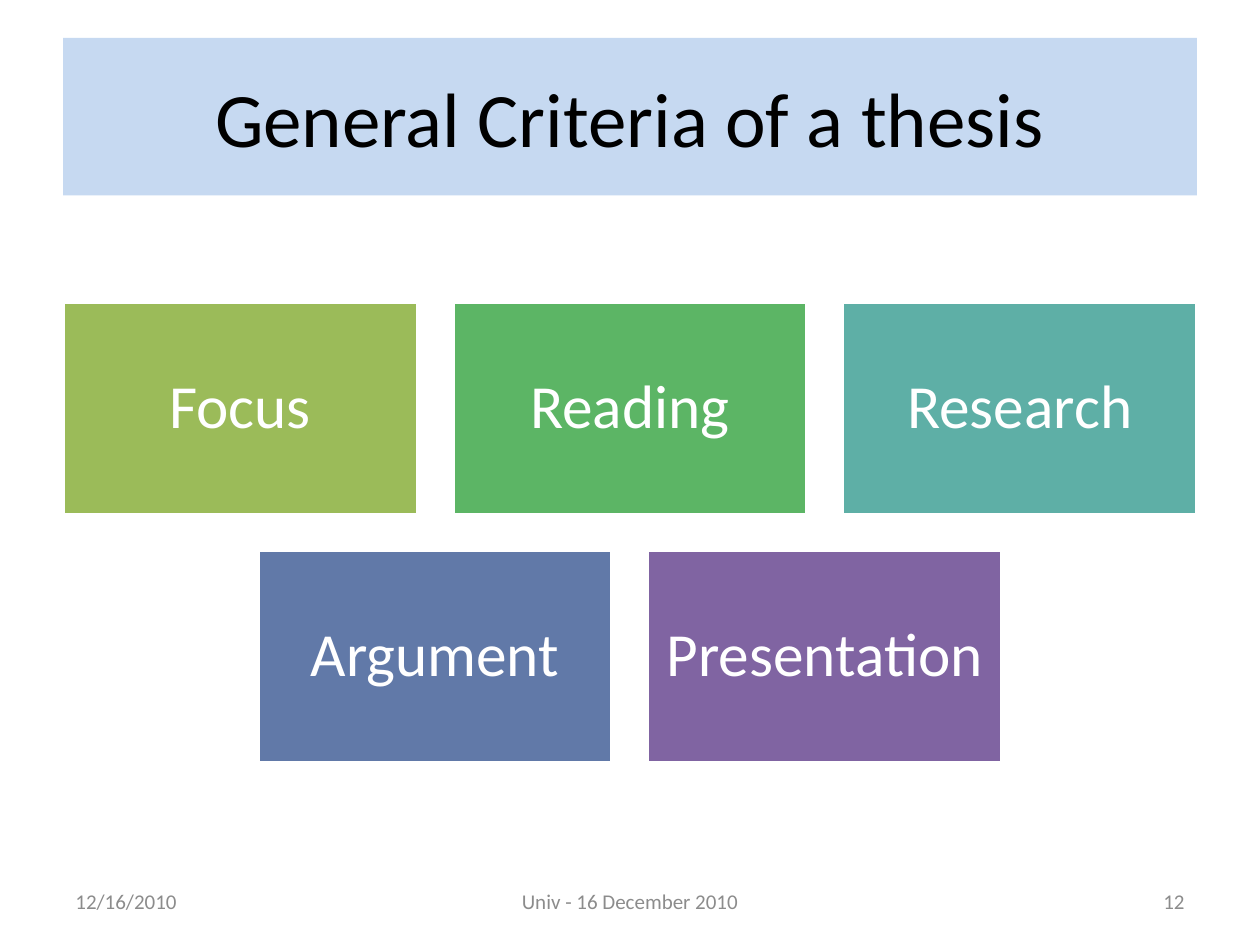
"""Build the slide on the general criteria of a thesis."""
from dataclasses import dataclass

from pptx import Presentation
from pptx.dml.color import RGBColor as RGB
from pptx.enum.shapes import MSO_SHAPE as Shape
from pptx.enum.text import MSO_ANCHOR as Anchor, PP_ALIGN as Align
from pptx.util import Pt

TITLE = "General Criteria of a thesis"
ROWS = [
    [("Focus", "9BBB59"), ("Reading", "5CB565"), ("Research", "5EAFA6")],
    [("Argument", "6179A8"), ("Presentation", "8064A2")],
]
FOOTERS = [
    ("12/16/2010", 36, 168, Align.LEFT),
    ("Univ - 16 December 2010", 246, 228, Align.CENTER),
    ("12", 516, 168, Align.RIGHT),
]
SLIDE_W, SLIDE_H = 720, 540
CARD_W, CARD_H, GAP, CARDS_TOP = 202.5, 121.5, 20.25, 172.8
FOOTER_TOP, FOOTER_H = 500.4, 28.8


@dataclass(frozen=True)
class Theme:
    font: str = "Calibri"
    band: str = "C6D9F1"
    ink: str = "000000"
    white: str = "FFFFFF"
    muted: str = "8C8C8C"
    title_size: int = 44
    card_size: int = 35
    footer_size: int = 12


THEME = Theme()


def place(sp, left, top, width, height):
    sp.left, sp.top, sp.width, sp.height = map(Pt, (left, top, width, height))


def fill(sp, color):
    sp.fill.solid()
    sp.fill.fore_color.rgb = RGB.from_string(color)


def write(sp, text, size, color, align=Align.CENTER):
    tf = sp.text_frame
    tf.word_wrap = True
    tf.vertical_anchor = Anchor.MIDDLE
    p = tf.paragraphs[0]
    p.alignment = align
    r = p.add_run()
    r.text = text
    r.font.name, r.font.size = THEME.font, Pt(size)
    r.font.color.rgb = RGB.from_string(color)
    return tf


def add_card(s, text, color, left, top):
    sp = s.shapes.add_shape(Shape.RECTANGLE, Pt(left), Pt(top), Pt(CARD_W), Pt(CARD_H))
    sp.shadow.inherit = False
    fill(sp, color)
    sp.line.color.rgb = RGB.from_string(THEME.white)
    sp.line.width = Pt(2)
    tf = write(sp, text, THEME.card_size, THEME.white)
    tf.margin_left = tf.margin_right = tf.margin_top = tf.margin_bottom = Pt(10)
    tf.paragraphs[0].line_spacing = 0.9


def main():
    prs = Presentation()
    prs.slide_width, prs.slide_height = Pt(SLIDE_W), Pt(SLIDE_H)
    s = prs.slides.add_slide(prs.slide_layouts[5])

    title = s.shapes.title
    place(title, 36, 21.6, 648, 90)
    fill(title, THEME.band)
    write(title, TITLE, THEME.title_size, THEME.ink)

    for i, row in enumerate(ROWS):
        row_w = len(row) * (CARD_W + GAP) - GAP
        for j, (text, color) in enumerate(row):
            left = (SLIDE_W - row_w) / 2 + j * (CARD_W + GAP)
            add_card(s, text, color, left, CARDS_TOP + i * (CARD_H + GAP))

    for text, left, width, align in FOOTERS:
        sp = s.shapes.add_textbox(Pt(left), Pt(FOOTER_TOP), Pt(width), Pt(FOOTER_H))
        write(sp, text, THEME.footer_size, THEME.muted, align)

    prs.save("out.pptx")


if __name__ == "__main__":
    main()
